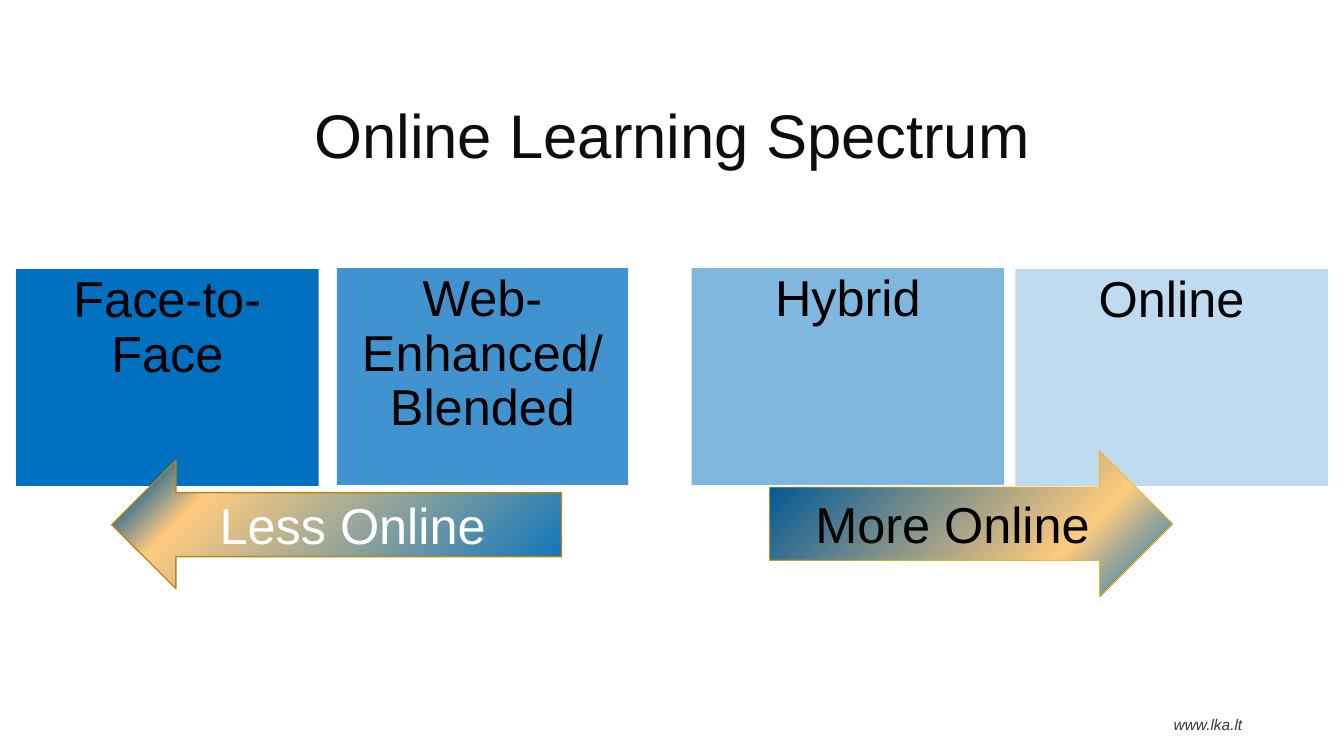
from dataclasses import dataclass

from lxml.etree import SubElement
from pptx import Presentation
from pptx.dml.color import RGBColor
from pptx.enum.shapes import MSO_SHAPE as Shape
from pptx.enum.text import MSO_ANCHOR as Anchor, PP_ALIGN as Align
from pptx.oxml import parse_xml
from pptx.oxml.ns import nsdecls, qn
from pptx.util import Pt

EMU_PER_PX = 9144  # 100 px to the inch
COLORS = {
    "blue": "0070C0", "navy": "005796", "orange": "FFCB7E",
    "bronze": "BA8710", "gold": "FCB716", "title": "0D0D0D",
    "footer": "3B3536", "black": "000000", "white": "FFFFFF",
}


@dataclass
class Box:
    left: int
    top: int
    width: int
    height: int

    def emu(self) -> list[int]:
        return [value * EMU_PER_PX for value in (self.left, self.top, self.width, self.height)]


@dataclass
class Stage:
    text: str
    box: Box
    opacity: int


@dataclass
class Arrow:
    text: str
    box: Box
    preset: Shape
    text_color: str
    line_color: str
    line_width: float
    orange_stop: int


STAGES = [
    Stage("Face-to-Face", Box(16, 267, 300, 215), 100),
    Stage("Web-Enhanced/ Blended", Box(334, 266, 289, 215), 75),
    Stage("Hybrid", Box(686, 266, 310, 215), 50),
    Stage("Online", Box(1007, 267, 310, 215), 25),
]
ARROWS = [
    Arrow("Less Online", Box(111, 457, 446, 127), Shape.LEFT_ARROW, "white", "bronze", 1, 78),
    Arrow("More Online", Box(763, 447, 400, 145), Shape.RIGHT_ARROW, "black", "gold", 0.5, 28),
]


def rgb(name: str) -> RGBColor:
    return RGBColor.from_string(COLORS[name])


def write_text(shape, text: str, color: str, size: int = 36, align=Align.CENTER,
               anchor=Anchor.TOP, spacing: float = 1.0, italic: bool = False) -> None:
    frame = shape.text_frame
    frame.word_wrap = True
    frame.vertical_anchor = anchor
    paragraph = frame.paragraphs[0]
    paragraph.alignment = align
    paragraph.line_spacing = spacing
    run = paragraph.add_run()
    run.text = text
    run.font.color.rgb = rgb(color)
    for name, value in {"name": "Arial", "size": Pt(size), "italic": italic}.items():
        setattr(run.font, name, value)


def add_text(slide, box: Box, text: str, color: str, **text_format) -> None:
    write_text(slide.shapes.add_textbox(*box.emu()), text, color, **text_format)


def add_stage(slide, stage: Stage) -> None:
    shape = slide.shapes.add_shape(Shape.RECTANGLE, *stage.box.emu())
    shape.shadow.inherit = False
    shape.fill.solid()
    shape.fill.fore_color.rgb = rgb("blue")
    shape.line.fill.background()
    if stage.opacity < 100:
        color = shape._element.spPr.find(qn("a:solidFill")).find(qn("a:srgbClr"))
        SubElement(color, qn("a:alpha"), val=str(stage.opacity * 1000))
    write_text(shape, stage.text, "black", spacing=0.9)


def add_arrow(slide, arrow: Arrow) -> None:
    shape = slide.shapes.add_shape(arrow.preset, *arrow.box.emu())
    shape.shadow.inherit = False
    shape.line.color.rgb = rgb(arrow.line_color)
    shape.line.width = Pt(arrow.line_width)
    # Radial gradient centred on the bottom right corner
    stops = "".join(
        f'<a:gs pos="{position * 1000}"><a:srgbClr val="{COLORS[name]}"/></a:gs>'
        for position, name in ((0, "blue"), (arrow.orange_stop, "orange"), (94, "navy"))
    )
    gradient = parse_xml(
        f'<a:gradFill {nsdecls("a")} rotWithShape="1"><a:gsLst>{stops}</a:gsLst>'
        '<a:path path="circle"><a:fillToRect l="100000" t="100000"/></a:path>'
        '<a:tileRect r="-100000" b="-100000"/></a:gradFill>'
    )
    shape._element.spPr.find(qn("a:prstGeom")).addnext(gradient)
    write_text(shape, arrow.text, arrow.text_color, anchor=Anchor.MIDDLE)


def main() -> None:
    presentation = Presentation()
    presentation.slide_width = 1333 * EMU_PER_PX
    presentation.slide_height = 750 * EMU_PER_PX
    slide = presentation.slides.add_slide(presentation.slide_layouts[6])

    # Footer and title
    add_text(slide, Box(953, 704, 289, 29), "www.lka.lt", "footer",
             size=11, align=Align.RIGHT, italic=True)
    add_text(slide, Box(92, 65, 1150, 145), "Online Learning Spectrum", "title",
             size=44, anchor=Anchor.MIDDLE, spacing=0.9)

    # Spectrum stages, then the arrows over them
    for stage in STAGES:
        add_stage(slide, stage)
    for arrow in ARROWS:
        add_arrow(slide, arrow)

    presentation.save("out.pptx")


if __name__ == "__main__":
    main()
